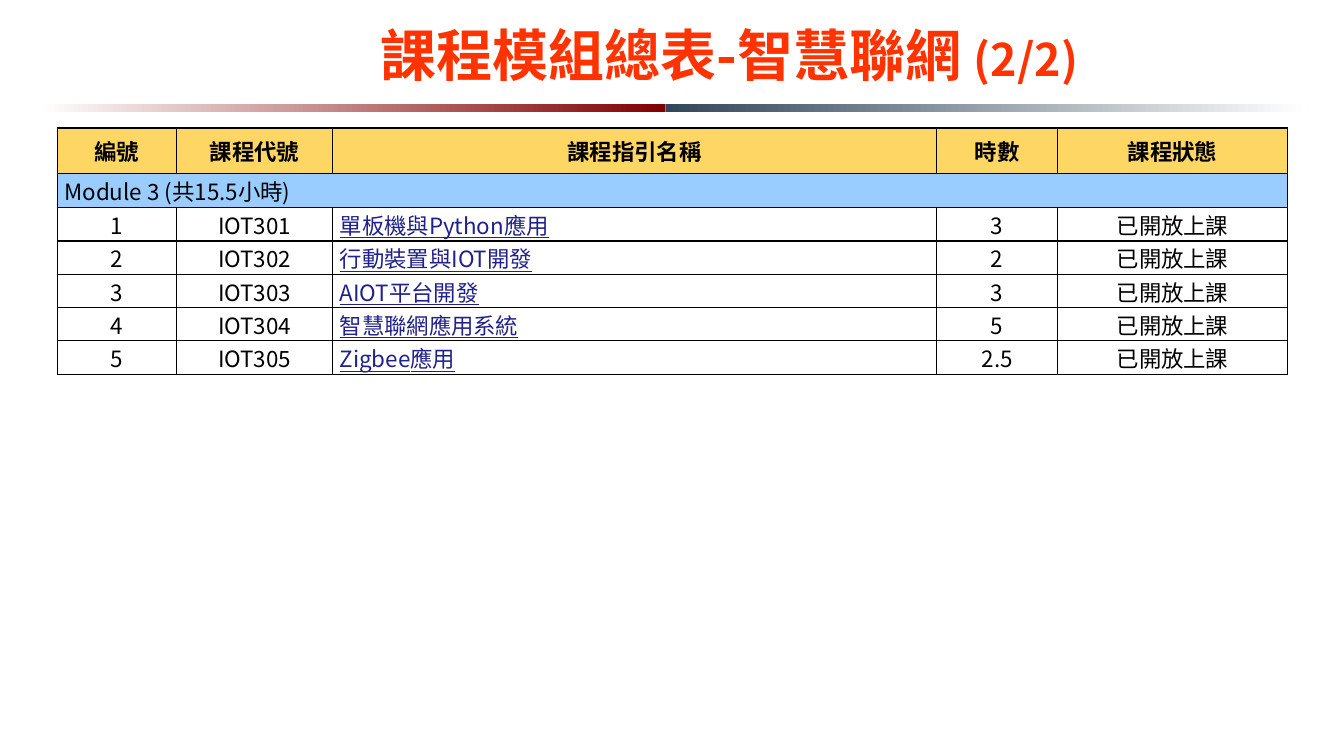
"""Build the course module summary slide for the connected-things track."""
import pptx
import pptx.dml.color
import pptx.enum.shapes
import pptx.enum.text
import pptx.oxml.ns
import pptx.util
from lxml import etree

Inches = pptx.util.Inches
RGBColor = pptx.dml.color.RGBColor
Align = pptx.enum.text.PP_ALIGN
qn = pptx.oxml.ns.qn

FONT = "Noto Sans CJK TC"
BLACK = RGBColor(0x00, 0x00, 0x00)
WHITE = RGBColor(0xFF, 0xFF, 0xFF)
ORANGE_RED = RGBColor(0xFF, 0x33, 0x00)
MAROON = RGBColor(0x80, 0x00, 0x00)
SLATE = RGBColor(0x31, 0x46, 0x59)
GOLD = RGBColor(0xFE, 0xD6, 0x64)
SKY = RGBColor(0x99, 0xCC, 0xFF)
LINK_BLUE = RGBColor(0x21, 0x21, 0x8A)

COLUMN_WIDTHS = [1.18, 1.55, 5.99, 1.2, 2.28]
HEADER_HEIGHT, MODULE_HEIGHT, COURSE_HEIGHT = 0.45, 0.34, 0.31
HEADINGS = ["編號", "課程代號", "課程指引名稱", "時數", "課程狀態"]
MODULE = "Module 3 (共15.5小時)"
STATUS = "已開放上課"
COURSES = [
    ("單板機與Python應用", "3"),
    ("行動裝置與IOT開發", "2"),
    ("AIOT平台開發", "3"),
    ("智慧聯網應用系統", "5"),
    ("Zigbee應用", "2.5"),
]


def add_run(paragraph, text, size, color, bold=False, underline=False):
    run = paragraph.add_run()
    run.text = text
    font = run.font
    font.size = pptx.util.Pt(size)
    font.bold = bold
    font.underline = underline
    font.color.rgb = color
    font.name = FONT
    etree.SubElement(run._r.get_or_add_rPr(), qn("a:ea"), typeface=FONT)


def set_title(slide):
    title = slide.shapes.title
    title.left, title.top = Inches(1.5), Inches(0.08)
    title.width, title.height = Inches(11.47), Inches(0.91)
    frame = title.text_frame
    frame.auto_size = pptx.enum.text.MSO_AUTO_SIZE.NONE
    frame.vertical_anchor = pptx.enum.text.MSO_ANCHOR.MIDDLE
    heading = frame.paragraphs[0]
    heading.alignment = Align.CENTER
    add_run(heading, "課程模組總表-智慧聯網 ", 40, ORANGE_RED, bold=True)
    add_run(heading, "(2/2)", 32, ORANGE_RED, bold=True)


def add_gradient_bar(slide, left, width, start, end):
    bar = slide.shapes.add_shape(
        pptx.enum.shapes.MSO_SHAPE.RECTANGLE,
        Inches(left), Inches(1.03), Inches(width), Inches(0.08))
    bar.shadow.inherit = False
    bar.line.fill.background()
    bar.fill.gradient()
    bar.fill.gradient_angle = 0
    for stop, color in zip(bar.fill.gradient_stops, (start, end)):
        stop.color.rgb = color


def add_borders(cell):
    properties = cell._tc.get_or_add_tcPr()
    for side in ("a:lnL", "a:lnR", "a:lnT", "a:lnB"):
        border = etree.SubElement(properties, qn(side), w=str(pptx.util.Pt(1)))
        solid = etree.SubElement(border, qn("a:solidFill"))
        etree.SubElement(solid, qn("a:srgbClr"), val=str(BLACK))


def format_cell(cell, fill=None, top_margin=0.01):
    add_borders(cell)
    if fill is None:
        cell.fill.background()
    else:
        cell.fill.solid()
        cell.fill.fore_color.rgb = fill
    cell.vertical_anchor = pptx.enum.text.MSO_ANCHOR.MIDDLE
    cell.margin_left = cell.margin_right = Inches(0.07)
    cell.margin_top, cell.margin_bottom = Inches(top_margin), Inches(0)


def write_cell(cell, text, alignment=Align.CENTER, color=BLACK, **style):
    paragraph = cell.text_frame.paragraphs[0]
    paragraph.alignment = alignment
    add_run(paragraph, text, 16, color, **style)


def add_course_table(slide):
    heights = [HEADER_HEIGHT, MODULE_HEIGHT] + [COURSE_HEIGHT] * len(COURSES)
    table = slide.shapes.add_table(
        len(heights), len(COLUMN_WIDTHS), Inches(0.57), Inches(1.27),
        Inches(sum(COLUMN_WIDTHS)), Inches(sum(heights))).table
    for column, width in zip(table.columns, COLUMN_WIDTHS):
        column.width = Inches(width)
    for row, height in zip(table.rows, heights):
        row.height = Inches(height)

    for column, heading in enumerate(HEADINGS):
        header = table.cell(0, column)
        format_cell(header, GOLD, top_margin=0)
        write_cell(header, heading, bold=True)
        format_cell(table.cell(1, column), SKY)

    module = table.cell(1, 0)
    module.merge(table.cell(1, len(HEADINGS) - 1))
    write_cell(module, MODULE, Align.LEFT)

    for number, (name, hours) in enumerate(COURSES, start=1):
        values = [str(number), f"IOT{300 + number}", name, hours, STATUS]
        for column, value in enumerate(values):
            cell = table.cell(number + 1, column)
            format_cell(cell)
            if value == name:
                write_cell(cell, value, Align.LEFT, LINK_BLUE, underline=True)
            else:
                write_cell(cell, value)


def main():
    deck = pptx.Presentation()
    deck.slide_width, deck.slide_height = Inches(13.33), Inches(7.5)
    slide = deck.slides.add_slide(deck.slide_layouts[5])
    add_gradient_bar(slide, 0.39, 6.21, WHITE, MAROON)
    add_gradient_bar(slide, 6.6, 6.37, SLATE, WHITE)
    set_title(slide)
    add_course_table(slide)
    deck.save("out.pptx")


if __name__ == "__main__":
    main()
